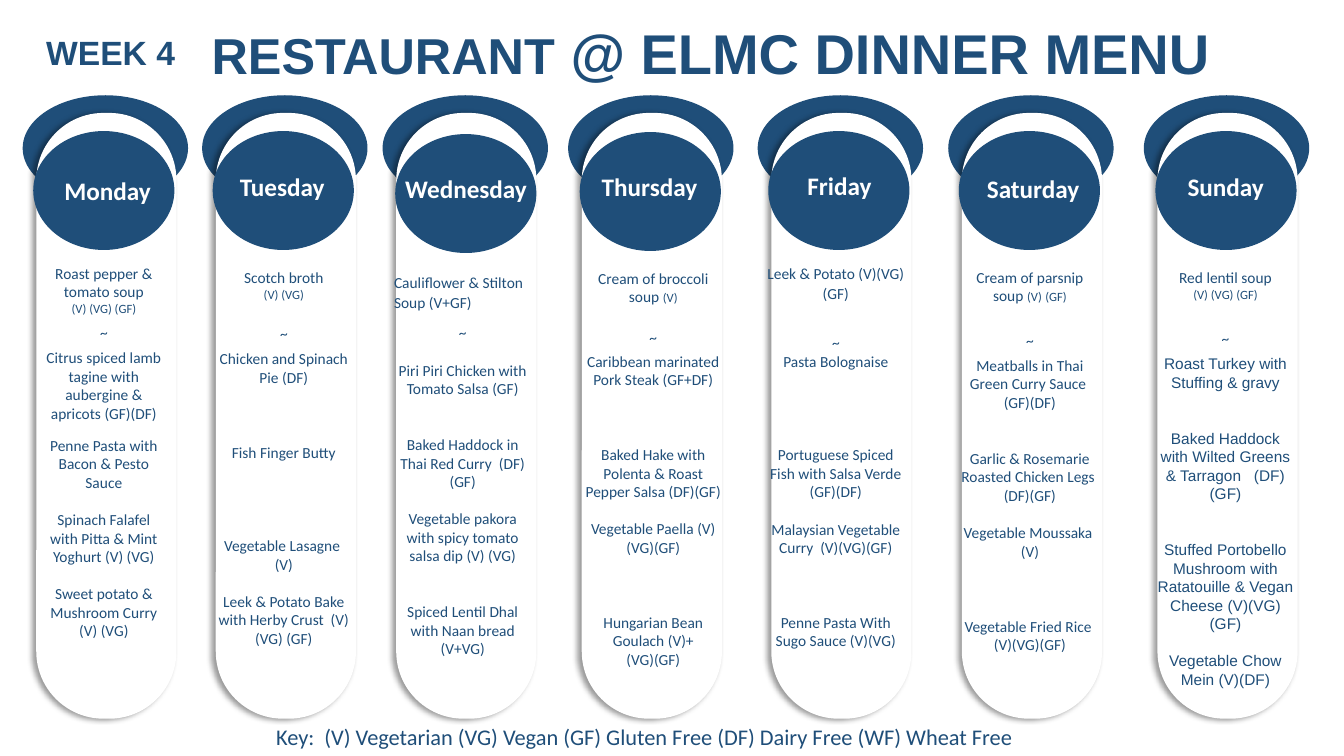
"""Build a one-slide weekly dinner menu with a column for each day."""
from lxml import etree
from pptx import Presentation
from pptx.dml.color import RGBColor
from pptx.enum.shapes import MSO_SHAPE
from pptx.enum.text import MSO_AUTO_SIZE, PP_ALIGN
from pptx.oxml.ns import qn
from pptx.util import Emu, Pt

OVAL, PILL = MSO_SHAPE.OVAL, MSO_SHAPE.ROUNDED_RECTANGLE
LEFT, CENTER = PP_ALIGN.LEFT, PP_ALIGN.CENTER
GROW = MSO_AUTO_SIZE.SHAPE_TO_FIT_TEXT

EMU_PER_PX = 9144
LINE_HEIGHT = 1.22
DISH_SIZE, TAG_SIZE = 11, 9
COLORS = {"navy": "1F4E79", "white": "FFFFFF", "shadow": "000000"}

WEEK = [("WEEK 4", 24)]
TITLE = [("RESTAURANT", 36), (" @ ELMC DINNER MENU", 40)]
KEY = [("Key:  (V) Vegetarian (VG) Vegan (GF) Gluten Free (DF) Dairy Free (WF) Wheat Free", 16)]

# Each dish is (blank points above, text); text between bars is set in the tag size.
DAYS = [
    {"name": "Monday", "hood": 52, "badge": (33, 130), "label": (54, 169, 107),
     "menu": (32, 257, 142, 426), "dishes": [
         (0, "Roast pepper & tomato soup"), (0, "|(V) (VG) (GF)"), (4, "~"),
         (4, "Citrus spiced lamb tagine with aubergine & apricots (GF)(DF)"),
         (8, "Penne Pasta with Bacon & Pesto Sauce"),
         (11, "Spinach Falafel with Pitta & Mint Yoghurt (V) (VG)"),
         (11, "Sweet potato & Mushroom Curry (V) (VG)")]},
    {"name": "Tuesday", "hood": 230, "badge": (211, 130), "label": (228, 165, 105),
     "menu": (204, 261, 155, 508), "dishes": [
         (0, "Scotch broth"), (0, "|(V) (VG)"), (13, "~"),
         (4, "Chicken and Spinach Pie (DF)"), (33, "Fish Finger Butty"),
         (44, "Vegetable Lasagne  (V)"),
         (11, "Leek & Potato Bake with Herby Crust  (V) (VG) (GF)")]},
    {"name": "Wednesday", "hood": 409, "badge": (392, 133), "label": (392, 167, 142),
     "menu": (381, 265, 156, 451), "lead": {"alignment": LEFT, "line_spacing": 1.07},
     "dishes": [
         (0, "Cauliflower & Stilton Soup (V+GF)"), (7, "~"),
         (11, "Piri Piri Chicken with Tomato Salsa (GF)"),
         (22, "Baked Haddock in Thai Red Curry  (DF)(GF)"),
         (11, "Vegetable pakora with spicy tomato salsa dip (V) (VG)"),
         (22, "Spiced Lentil Dhal with Naan bread (V+VG)")]},
    {"name": "Thursday", "hood": 593, "badge": (575, 131), "label": (587, 165, 116),
     "menu": (568, 262, 160, 446), "dishes": [
         (0, "Cream of broccoli soup |(V)"), (13, "~"),
         (3, "Caribbean marinated Pork Steak (GF+DF)"),
         (33, "Baked Hake with Polenta & Roast"), (0, "Pepper Salsa (DF)(GF)"),
         (11, "Vegetable Paella (V)(VG)(GF)"),
         (33, "Hungarian Bean Goulach (V)+"), (0, "(VG)(GF)")]},
    {"name": "Friday", "hood": 781, "badge": (762, 130), "label": (791, 164, 84),
     "menu": (750, 256, 158, 394), "lead": {"line_spacing": 1.07}, "dishes": [
         (0, "Leek & Potato (V)(VG)(GF)"), (18, "~"), (0, "Pasta Bolognaise"),
         (44, "Portuguese Spiced Fish with Salsa Verde (GF)(DF)"),
         (11, "Malaysian Vegetable Curry  (V)(VG)(GF)"),
         (33, "Penne Pasta With Sugo Sauce (V)(VG)")]},
    {"name": "Saturday", "hood": 970, "badge": (951, 130), "label": (969, 167, 113),
     "menu": (943, 261, 157, 431), "dishes": [
         (0, "Cream of parsnip soup |(V)| |(GF)"), (15, "~"),
         (4, "Meatballs in Thai Green Curry Sauce  (GF)(DF)"),
         (22, "Garlic & Rosemarie Roasted Chicken Legs  (DF)(GF)"),
         (11, "Vegetable Moussaka  (V)"), (33, "Vegetable Fried Rice  (V)(VG)(GF)")]},
    {"name": "Sunday", "hood": 1164, "badge": (1146, 130), "label": (1168, 165, 97),
     "menu": (1137, 261, 157, 429), "main_font": "Arial", "dishes": [
         (0, "Red lentil soup"), (0, "|(V) (VG) (GF)"), (16, "~"),
         (4, "Roast Turkey with Stuffing & gravy"),
         (22, "Baked Haddock with Wilted Greens & Tarragon   (DF)(GF)"),
         (22, "Stuffed Portobello Mushroom with Ratatouille & Vegan Cheese (V)(VG)(GF)"),
         (11, "Vegetable Chow Mein (V)(DF)")]},
]


def px(*lengths):
    return [Emu(length * EMU_PER_PX) for length in lengths]


def apply_format(target, values):
    for name, value in values.items():
        setattr(target, name, value)


def add_shape(slide, kind, box, color, rotation=0):
    shape = slide.shapes.add_shape(kind, *px(*box))
    shape.rotation = rotation
    shape.shadow.inherit = False
    shape.fill.solid()
    shape.fill.fore_color.rgb = RGBColor.from_string(COLORS[color])
    shape.line.fill.background()
    return shape


def add_left_shadow(shape):
    effects = shape.element.spPr.find(qn("a:effectLst"))
    shadow = etree.SubElement(effects, qn("a:outerShdw"), blurRad=str(Pt(4)),
                              dist=str(Pt(3)), dir="10800000", rotWithShape="0")
    color = etree.SubElement(shadow, qn("a:srgbClr"), val=COLORS["shadow"])
    etree.SubElement(color, qn("a:alpha"), val="40000")


def add_text_box(slide, box, wrap=True):
    frame = slide.shapes.add_textbox(*px(*box)).text_frame
    apply_format(frame, {"word_wrap": wrap, "auto_size": GROW})
    return frame


def add_runs(paragraph, runs, font_name, color="navy", bold=False):
    for text, size in runs:
        run = paragraph.add_run()
        run.text = text
        apply_format(run.font, {"name": font_name, "size": Pt(size), "bold": bold})
        run.font.color.rgb = RGBColor.from_string(COLORS[color])


def add_menu(slide, day):
    frame = add_text_box(slide, day["menu"])
    font_name = "Calibri"
    for index, (blank, text) in enumerate(day["dishes"]):
        paragraph = frame.add_paragraph() if index else frame.paragraphs[0]
        values = {"alignment": CENTER, "space_before": Pt(round(blank * LINE_HEIGHT, 1))}
        if index == 0:
            values.update(day.get("lead", {}))
        apply_format(paragraph, values)
        runs = [(piece, TAG_SIZE if order % 2 else DISH_SIZE)
                for order, piece in enumerate(text.split("|")) if piece]
        add_runs(paragraph, runs, font_name)
        if text == "~":
            font_name = day.get("main_font", font_name)


def main():
    presentation = Presentation()
    presentation.slide_width, presentation.slide_height = px(1333, 750)
    slide = presentation.slides.add_slide(presentation.slide_layouts[6])

    for day in DAYS:
        add_shape(slide, OVAL, (day["hood"], 65, 105, 164), "navy", 270)
        pill = add_shape(slide, PILL, (day["hood"] - 247, 343, 601, 139), "white", 270)
        pill.adjustments[0] = 0.48
        add_left_shadow(pill)
        add_menu(slide, day)
        add_shape(slide, OVAL, (*day["badge"], 140, 118), "navy")
        left, top, width = day["label"]
        label = add_text_box(slide, (left, top, width, 40), wrap=False)
        add_runs(label.paragraphs[0], [(day["name"], 18)], "Calibri", "white", True)

    for runs, box, font_name, wrap, bold in (
        (WEEK, (36, 27, 149, 50), "Arial", True, True),
        (TITLE, (200, 13, 1066, 77), "Arial", False, True),
        (KEY, (264, 713, 758, 37), "Calibri", True, False),
    ):
        frame = add_text_box(slide, box, wrap)
        add_runs(frame.paragraphs[0], runs, font_name, bold=bold)

    presentation.save("out.pptx")


if __name__ == "__main__":
    main()
